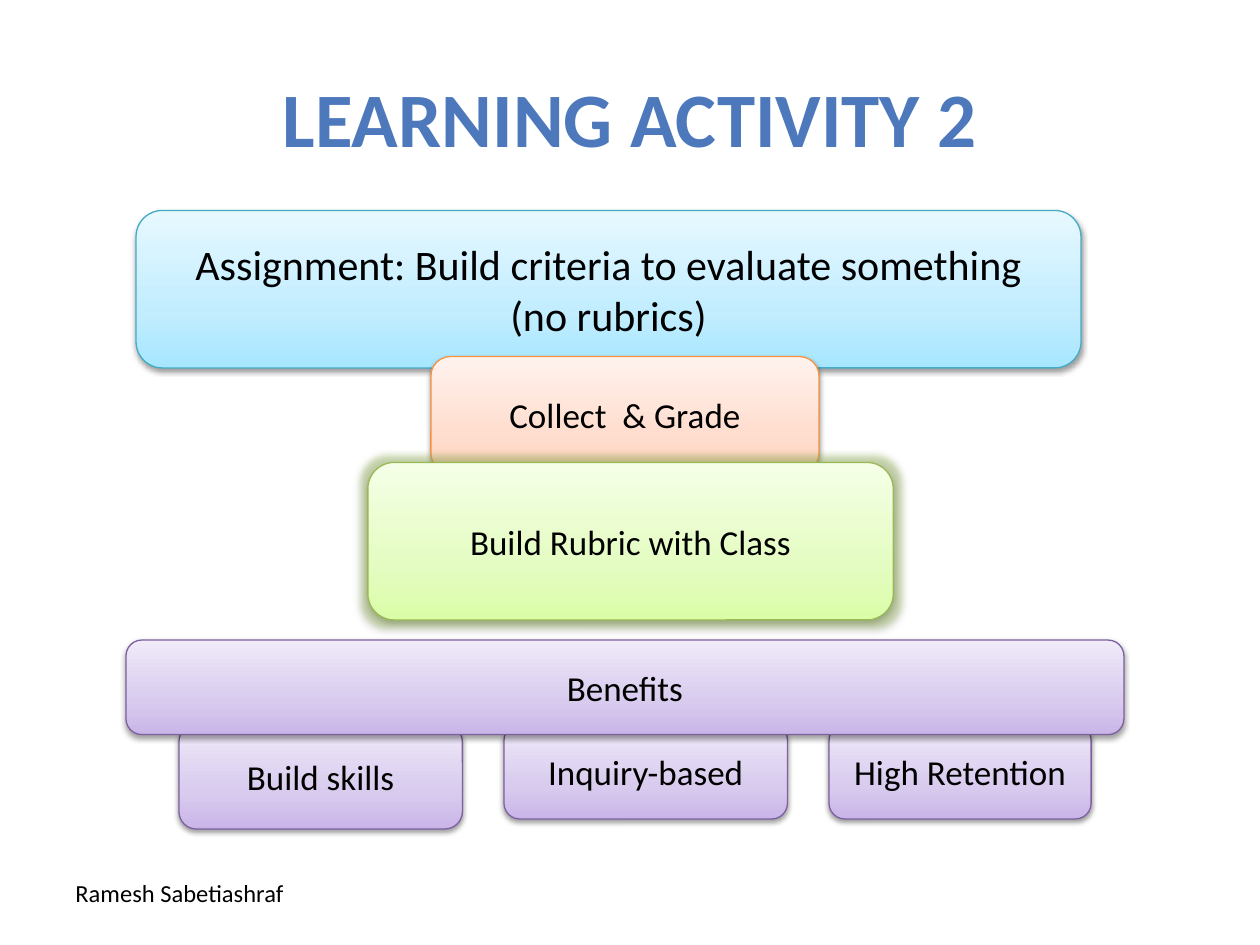
from lxml.etree import SubElement
from pptx import Presentation
from pptx.dml.color import RGBColor
from pptx.enum.shapes import MSO_SHAPE as Shape
from pptx.enum.text import MSO_ANCHOR as Anchor, PP_ALIGN as Align
from pptx.oxml.ns import qn
from pptx.util import Inches, Pt

BLUE = ("46AAC5", ["A7E6FF", "C1EDFF", "E7F8FF"])
ORANGE = ("F69240", ["FFD2BD", "FFDED0", "FFF2ED"])
PURPLE = ("7D60A0", ["C9B5E8", "D8CBEE", "F0EAF9"])
GREEN = ("98B955", ["DAFDA7", "E4FCC2", "F5FFE7"])


def color(value):
    return RGBColor.from_string(value)


def write(shape, text, size=20, fill="000000", bold=False,
          align=Align.CENTER, anchor=Anchor.MIDDLE):
    """Put one paragraph in the shape for each line of text."""
    frame = shape.text_frame
    frame.word_wrap = True
    frame.vertical_anchor = anchor
    for index, line in enumerate(text.split("\n")):
        para = frame.add_paragraph() if index else frame.paragraphs[0]
        para.alignment = align
        span = para.add_run()
        span.text = line
        span.font.name = "Calibri"
        span.font.size = Pt(size)
        span.font.bold = bold
        span.font.color.rgb = color(fill)


deck = Presentation()
deck.slide_width, deck.slide_height = Inches(10), Inches(7.5)
page = deck.slides.add_slide(deck.slide_layouts[6])

footer = page.shapes.add_textbox(Inches(0.5), Inches(6.92), Inches(2.75), Inches(0.57))
write(footer, "Ramesh Sabetiashraf", size=14, align=Align.LEFT, anchor=Anchor.TOP)

title = page.shapes.add_textbox(Inches(0.5), Inches(0.3), Inches(9), Inches(1.25))
write(title, "LEARNING ACTIVITY 2", size=44, fill="4D79BC", bold=True)

# Back to front: text, text size, theme, left, top, width, height
boxes = [
    ("Assignment: Build criteria to evaluate something\n(no rubrics)", 24, BLUE,
     1.08, 1.67, 7.5, 1.25),
    ("Collect  & Grade", 20, ORANGE, 3.42, 2.83, 3.08, 0.92),
    ("Build skills", 20, PURPLE, 1.42, 5.75, 2.25, 0.83),
    ("Inquiry-based", 20, PURPLE, 4, 5.75, 2.25, 0.75),
    ("High Retention", 20, PURPLE, 6.58, 5.75, 2.08, 0.75),
    ("Build Rubric with Class", 20, GREEN, 2.92, 3.67, 4.17, 1.25),
    ("Benefits", 20, PURPLE, 1, 5.08, 7.92, 0.75),
]
for text, size, theme, *place in boxes:
    box = page.shapes.add_shape(Shape.ROUNDED_RECTANGLE, *map(Inches, place))
    outline, shades = theme
    box.line.color.rgb = color(outline)
    box.line.width = Pt(0.75)
    write(box, text, size=size)

    # Three-stop gradient, running from the bottom edge up
    box.fill.gradient()
    gradient = box._element.spPr.find(qn("a:gradFill"))
    for child in list(gradient):
        gradient.remove(child)
    stops = SubElement(gradient, qn("a:gsLst"))
    for position, shade in zip((0, 35, 100), shades):
        stop = SubElement(stops, qn("a:gs"), pos=str(position * 1000))
        SubElement(stop, qn("a:srgbClr"), val=shade)
    SubElement(gradient, qn("a:lin"), ang=str(270 * 60000), scaled="0")

    # Soft shadow below every box, and a glow around the green one
    box.shadow.inherit = False
    effects = box._element.spPr.find(qn("a:effectLst"))
    if theme is GREEN:
        glow = SubElement(effects, qn("a:glow"), rad=str(Pt(8)))
        tint = SubElement(glow, qn("a:srgbClr"), val="9BBB59")
        SubElement(tint, qn("a:alpha"), val="40000")
    shadow = SubElement(effects, qn("a:outerShdw"), blurRad=str(Pt(3.1)),
                        dist=str(Pt(1.6)), dir=str(90 * 60000), rotWithShape="0")
    tint = SubElement(shadow, qn("a:srgbClr"), val="000000")
    SubElement(tint, qn("a:alpha"), val="38000")

deck.save("out.pptx")
